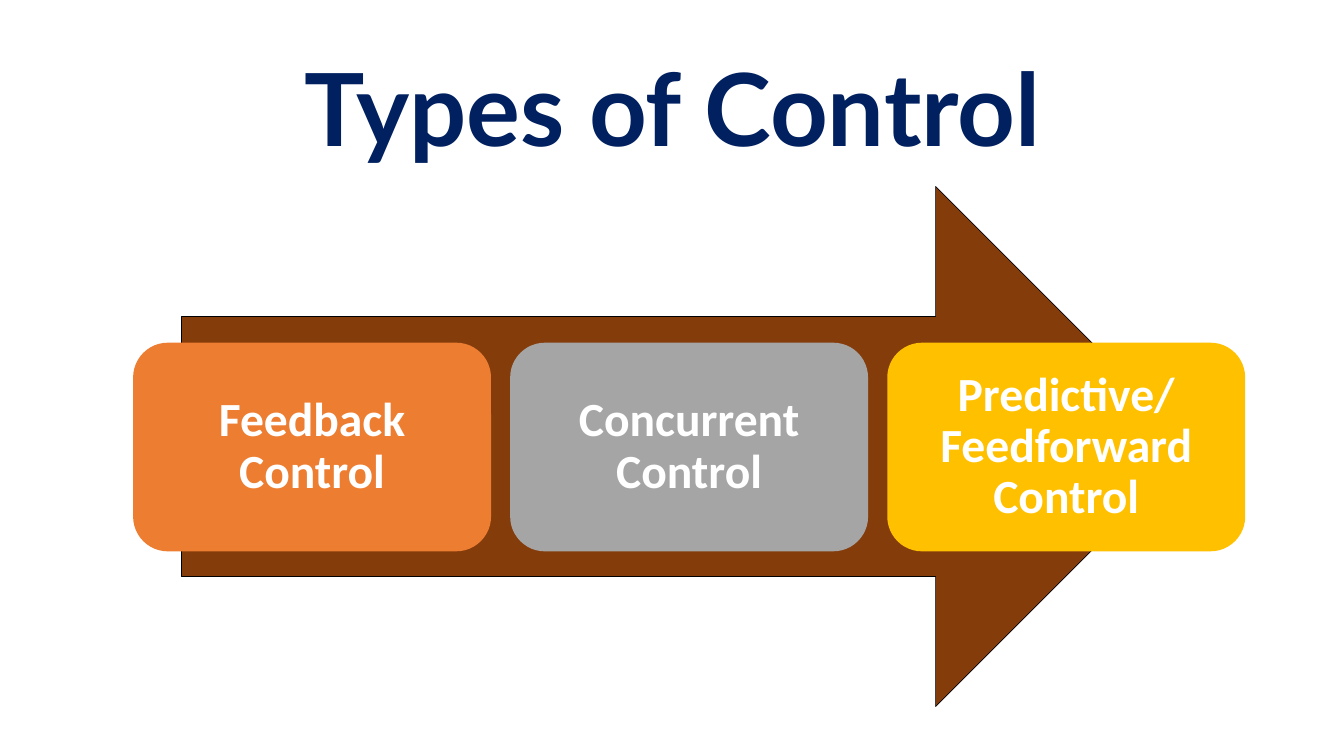
from dataclasses import dataclass

from lxml import etree
from pptx import Presentation
from pptx.dml.color import RGBColor
from pptx.enum import shapes, text
from pptx.oxml import ns
from pptx.util import Inches, Pt

COLORS = {
    "title": "002060",
    "title_outline": "E7E6E6",
    "arrow": "843C0B",
    "arrow_line": "000000",
    "feedback": "ED7D31",
    "concurrent": "A5A5A5",
    "feedforward": "FFC000",
    "label": "FFFFFF",
}
CARD_LEFT, CARD_TOP = 1.32, 3.4
CARD_WIDTH, CARD_HEIGHT = 3.55, 2.07
CARD_PITCH = 3.74
CARD_INSET = 0.24


@dataclass
class ControlType:
    label: str
    color: str


CONTROL_TYPES = [
    ControlType("Feedback Control", "feedback"),
    ControlType("Concurrent Control", "concurrent"),
    ControlType("Predictive/ Feedforward Control", "feedforward"),
]


def rgb(name: str) -> RGBColor:
    return RGBColor.from_string(COLORS[name])


def write_text(sp, content: str, font: str, size: float, color: str):
    tf = sp.text_frame
    tf.word_wrap = True
    tf.auto_size = text.MSO_AUTO_SIZE.NONE
    tf.vertical_anchor = text.MSO_ANCHOR.MIDDLE
    p = tf.paragraphs[0]
    p.alignment = text.PP_ALIGN.CENTER
    p.line_spacing = 0.9
    r = p.add_run()
    r.text = content
    r.font.name = font
    r.font.size = Pt(size)
    r.font.bold = True
    r.font.color.rgb = rgb(color)
    return r


def outline_text(r, color: str, width: float) -> None:
    ln = etree.Element(ns.qn("a:ln"), w=str(Pt(width)))
    fill = etree.SubElement(ln, ns.qn("a:solidFill"))
    etree.SubElement(fill, ns.qn("a:srgbClr"), val=COLORS[color])
    r._r.get_or_add_rPr().insert(0, ln)


def add_title(s) -> None:
    sp = s.shapes.title
    sp.left, sp.top = Inches(0.92), Inches(0.4)
    sp.width, sp.height = Inches(11.5), Inches(1.45)
    r = write_text(sp, "Types of Control", "Lato", 72, "title")
    outline_text(r, "title_outline", 0.75)


def add_filled(s, kind, left: float, top: float, width: float, height: float, color: str):
    sp = s.shapes.add_shape(kind, Inches(left), Inches(top), Inches(width), Inches(height))
    sp.shadow.inherit = False
    sp.fill.solid()
    sp.fill.fore_color.rgb = rgb(color)
    return sp


def add_arrow(s) -> None:
    sp = add_filled(s, shapes.MSO_SHAPE.RIGHT_ARROW, 1.8, 1.85, 10.06, 5.16, "arrow")
    sp.line.color.rgb = rgb("arrow_line")
    sp.line.width = Pt(0.5)


def add_card(s, index: int, control: ControlType) -> None:
    left = CARD_LEFT + index * CARD_PITCH
    sp = add_filled(s, shapes.MSO_SHAPE.ROUNDED_RECTANGLE, left, CARD_TOP,
                    CARD_WIDTH, CARD_HEIGHT, control.color)
    sp.line.fill.background()
    tf = sp.text_frame
    tf.margin_left = tf.margin_right = Inches(CARD_INSET)
    tf.margin_top = tf.margin_bottom = Inches(CARD_INSET)
    write_text(sp, control.label, "Calibri", 34, "label")


def main() -> None:
    prs = Presentation()
    prs.slide_width, prs.slide_height = Inches(13.33), Inches(7.5)
    s = prs.slides.add_slide(prs.slide_layouts[5])
    add_title(s)
    add_arrow(s)
    for index, control in enumerate(CONTROL_TYPES):
        add_card(s, index, control)
    prs.save("out.pptx")


if __name__ == "__main__":
    main()
